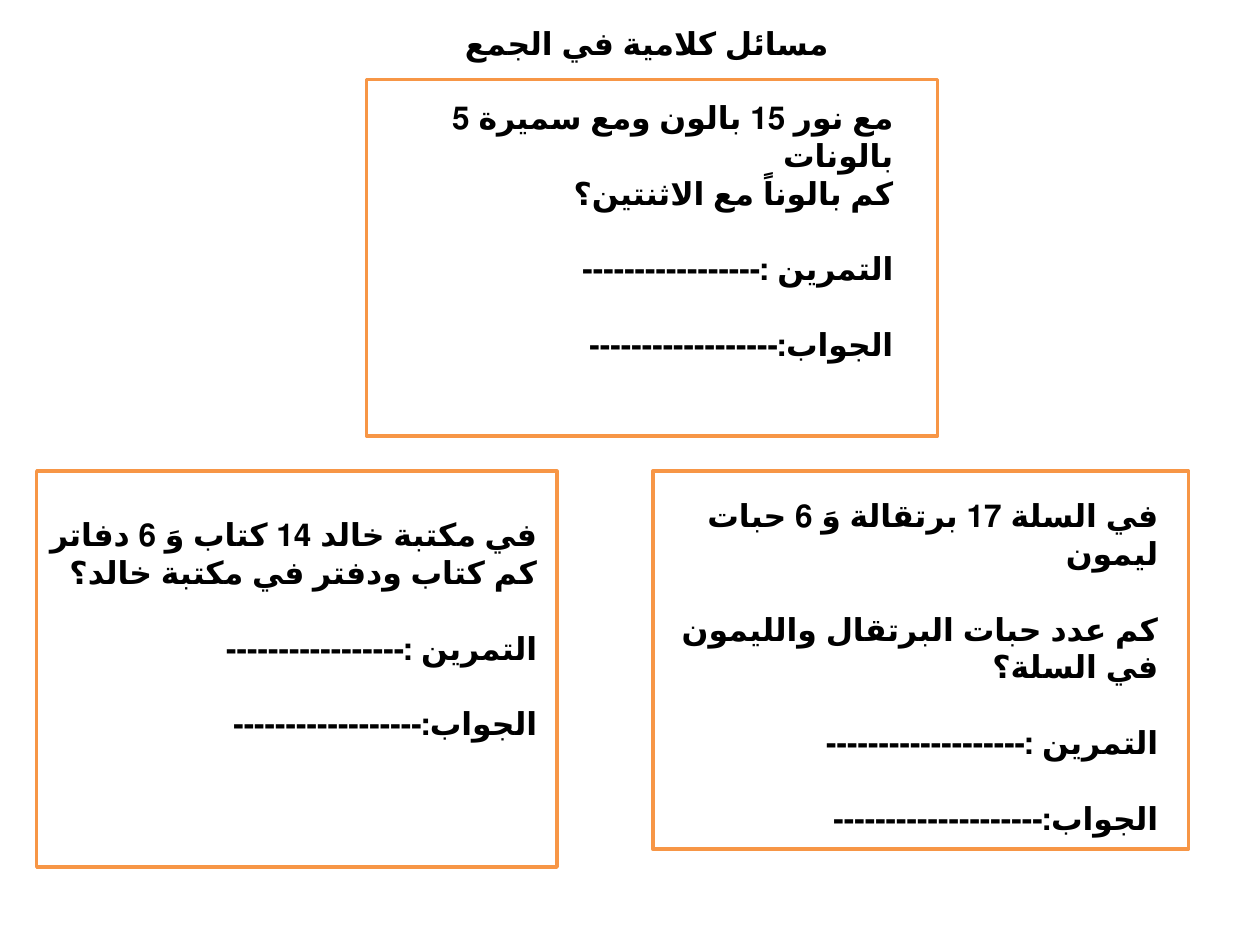
from dataclasses import dataclass

from pptx import Presentation
from pptx.dml.color import RGBColor
from pptx.enum.lang import MSO_LANGUAGE_ID
from pptx.enum.shapes import MSO_SHAPE
from pptx.enum.text import MSO_AUTO_SIZE, PP_ALIGN
from pptx.util import Cm, Pt

ARABIC = MSO_LANGUAGE_ID.ARABIC
RECTANGLE = MSO_SHAPE.RECTANGLE
GROW = MSO_AUTO_SIZE.SHAPE_TO_FIT_TEXT
RIGHT, CENTER = PP_ALIGN.RIGHT, PP_ALIGN.CENTER


@dataclass(frozen=True)
class Theme:
    font: str = "Calibri"
    size: float = 18
    gap: float = 21.6  # one empty line
    border: float = 2
    ink: RGBColor = RGBColor(0x00, 0x00, 0x00)
    paper: RGBColor = RGBColor(0xFF, 0xFF, 0xFF)
    accent: RGBColor = RGBColor(0xF7, 0x96, 0x46)


class Worksheet:
    def __init__(self, slide, theme):
        self.slide = slide
        self.theme = theme

    def frame(self, box):
        card = self.slide.shapes.add_shape(RECTANGLE, *map(Cm, box))
        card.shadow.inherit = False
        card.fill.solid()
        card.fill.fore_color.rgb = self.theme.paper
        card.line.color.rgb = self.theme.accent
        card.line.width = Pt(self.theme.border)

    def text(self, box, lines, align=RIGHT):
        """Each line is a pair: wording, and whether a gap comes before it."""
        frame = self.slide.shapes.add_textbox(*map(Cm, box)).text_frame
        frame.word_wrap = True
        frame.auto_size = GROW
        for index, (wording, spaced) in enumerate(lines):
            paragraph = frame.add_paragraph() if index else frame.paragraphs[0]
            run = paragraph.add_run()
            run.text = wording
            run.font.language_id = ARABIC
            paragraph.alignment = align
            paragraph._p.get_or_add_pPr().set("rtl", "1")
            if spaced:
                paragraph.space_before = Pt(self.theme.gap)
            font = paragraph.font
            font.name = self.theme.font
            font.size = Pt(self.theme.size)
            font.bold = True
            font.color.rgb = self.theme.ink

    def problem(self, frame_box, text_box, story, dashes):
        self.frame(frame_box)
        self.text(text_box, story + [
            ("التمرين :" + "-" * dashes, True),
            ("الجواب:" + "-" * (dashes + 1), True),
        ])


def main():
    presentation = Presentation()
    presentation.slide_width, presentation.slide_height = Cm(25.4), Cm(19.05)
    slide = presentation.slides.add_slide(presentation.slide_layouts[6])
    worksheet = Worksheet(slide, Theme())

    # Title
    worksheet.text((6.55, 0.36, 12.8, 1.02),
                   [("مسائل كلامية في الجمع ", False)], CENTER)

    # Balloons
    worksheet.problem(
        (7.39, 1.6, 11.51, 7.19), (8.53, 1.85, 9.73, 4.88),
        [("مع نور 15 بالون ومع سميرة 5 بالونات", False),
         ("كم بالوناً مع الاثنتين؟", False)], 17)

    # Fruit basket
    worksheet.problem(
        (13.16, 9.5, 10.8, 7.62), (12.8, 9.88, 10.8, 5.64),
        [("في السلة 17 برتقالة وَ 6 حبات ليمون", False),
         ("كم عدد حبات البرتقال والليمون في السلة؟", True)], 19)

    # Library
    worksheet.problem(
        (0.74, 9.5, 10.49, 7.98), (0.69, 10.26, 10.39, 4.88),
        [("في مكتبة خالد 14 كتاب وَ 6 دفاتر", False),
         ("كم كتاب ودفتر في مكتبة خالد؟", False)], 17)

    presentation.save("out.pptx")


if __name__ == "__main__":
    main()
